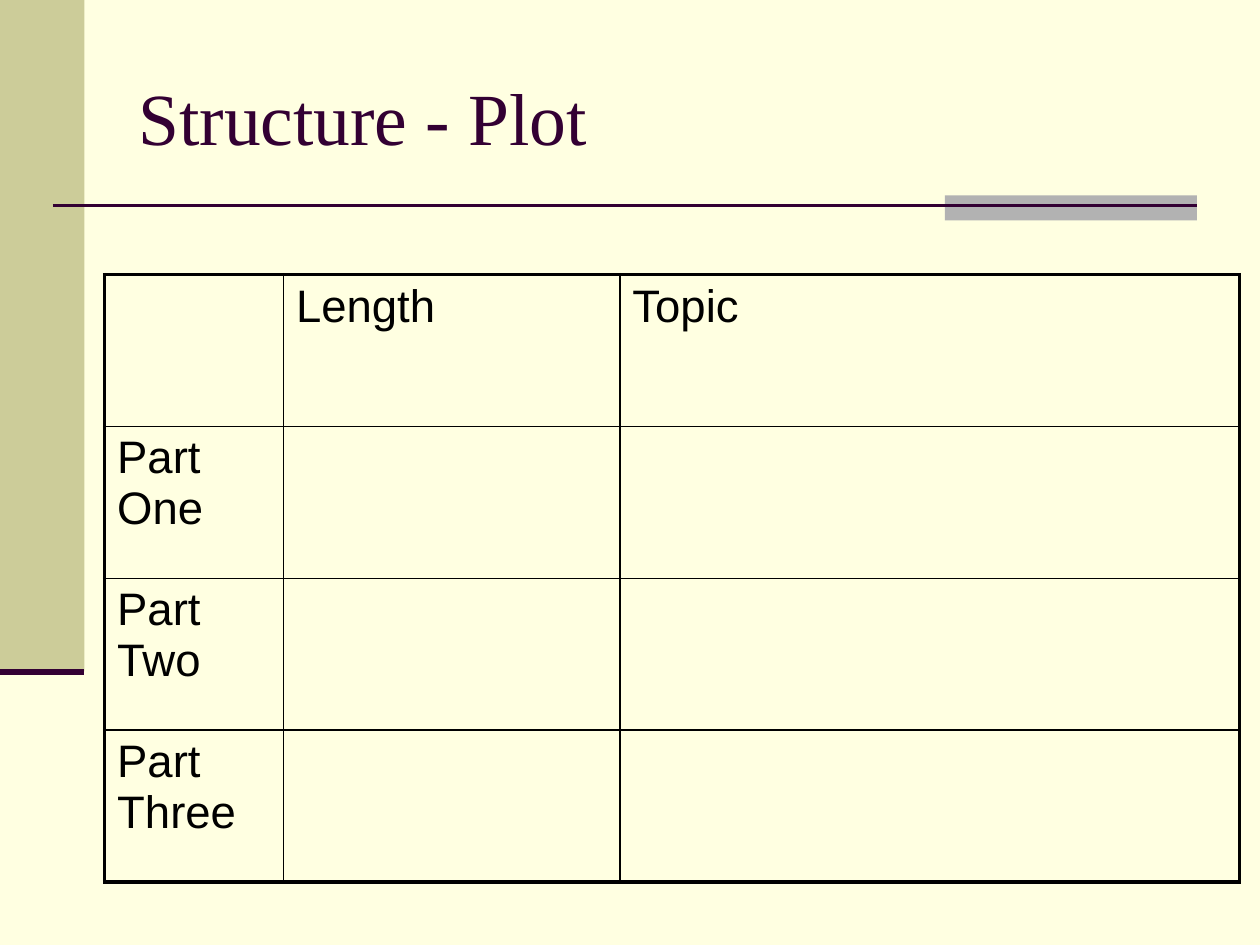
from dataclasses import dataclass

from lxml.etree import SubElement as Sub
from pptx import Presentation
from pptx.dml.color import RGBColor as Rgb
from pptx.enum.shapes import MSO_CONNECTOR as Conn, MSO_SHAPE as Shape
from pptx.enum.text import MSO_ANCHOR as Anchor
from pptx.oxml.ns import qn
from pptx.slide import Slide
from pptx.table import _Cell as Cell
from pptx.text.text import TextFrame as Frame
from pptx.util import Inches, Pt


@dataclass(frozen=True)
class Theme:
    paper: str = "FFFFE1"
    sand: str = "CCCC99"
    gray: str = "B2B2B2"
    plum: str = "330033"
    ink: str = "000000"
    serif: str = "Times New Roman"
    sans: str = "Arial"
    title: float = 42
    body: float = 26
    thin: float = 1
    thick: float = 2.25


@dataclass(frozen=True)
class Block:
    left: float
    top: float
    width: float
    height: float
    color: str


@dataclass(frozen=True)
class Rule:
    left: float
    right: float
    y: float
    weight: float


THEME = Theme()
BLOCKS = (
    Block(0, 0, 0.67, 5.33, THEME.sand),
    Block(7.5, 1.55, 2, 0.2, THEME.gray),
)
RULES = (Rule(0.42, 9.5, 1.63, 1.5), Rule(0, 0.67, 5.33, 3.5))
COLS = (1.42, 2.67, 4.92)
ROW = 1.205
ROWS = (
    ("", "Length", "Topic"),
    ("Part One", "", ""),
    ("Part Two", "", ""),
    ("Part Three", "", ""),
)


def draw_block(slide: Slide, block: Block) -> None:
    box = slide.shapes.add_shape(
        Shape.RECTANGLE, Inches(block.left), Inches(block.top),
        Inches(block.width), Inches(block.height))
    box.shadow.inherit = False
    box.fill.solid()
    box.fill.fore_color.rgb = Rgb.from_string(block.color)
    box.line.fill.background()


def draw_rule(slide: Slide, rule: Rule) -> None:
    line = slide.shapes.add_connector(
        Conn.STRAIGHT, Inches(rule.left), Inches(rule.y),
        Inches(rule.right), Inches(rule.y))
    line.line.color.rgb = Rgb.from_string(THEME.plum)
    line.line.width = Pt(rule.weight)
    Sub(line._element.spPr, qn("a:effectLst"))


def write(frame: Frame, text: str, font: str, size: float, color: str) -> None:
    frame.text = text
    frame.word_wrap = True
    for run in frame.paragraphs[0].runs:
        run.font.name = font
        run.font.size = Pt(size)
        run.font.color.rgb = Rgb.from_string(color)


def draw_title(slide: Slide, text: str) -> None:
    box = slide.shapes.add_textbox(
        Inches(1), Inches(0.3), Inches(8.5), Inches(1.25))
    write(box.text_frame, text, THEME.serif, THEME.title, THEME.plum)
    box.text_frame.vertical_anchor = Anchor.MIDDLE


def set_edges(cell: Cell, outer: dict[str, bool]) -> None:
    props = cell._tc.get_or_add_tcPr()
    for side, edge in outer.items():
        weight = THEME.thick if edge else THEME.thin
        line = Sub(props, qn(f"a:ln{side}"), w=str(Pt(weight)))
        fill = Sub(line, qn("a:solidFill"))
        Sub(fill, qn("a:srgbClr"), val=THEME.ink)


def draw_table(slide: Slide) -> None:
    table = slide.shapes.add_table(
        len(ROWS), len(COLS), Inches(0.83), Inches(2.18),
        Inches(sum(COLS)), Inches(ROW * len(ROWS))).table
    table.first_row = table.horz_banding = False
    for col, width in zip(table.columns, COLS):
        col.width = Inches(width)
    for r, texts in enumerate(ROWS):
        table.rows[r].height = Inches(ROW)
        for c, text in enumerate(texts):
            cell = table.cell(r, c)
            write(cell.text_frame, text, THEME.sans, THEME.body, THEME.ink)
            set_edges(cell, {
                "L": c == 0, "R": c == len(COLS) - 1,
                "T": r == 0, "B": r == len(ROWS) - 1})
            cell.fill.background()


def main() -> None:
    """Build the plot structure slide."""
    deck = Presentation()
    deck.slide_width, deck.slide_height = Inches(10), Inches(7.5)
    slide = deck.slides.add_slide(deck.slide_layouts[6])
    slide.background.fill.solid()
    slide.background.fill.fore_color.rgb = Rgb.from_string(THEME.paper)
    for block in BLOCKS:
        draw_block(slide, block)
    for rule in RULES:
        draw_rule(slide, rule)
    draw_title(slide, "Structure - Plot")
    draw_table(slide)
    deck.save("out.pptx")


if __name__ == "__main__":
    main()
